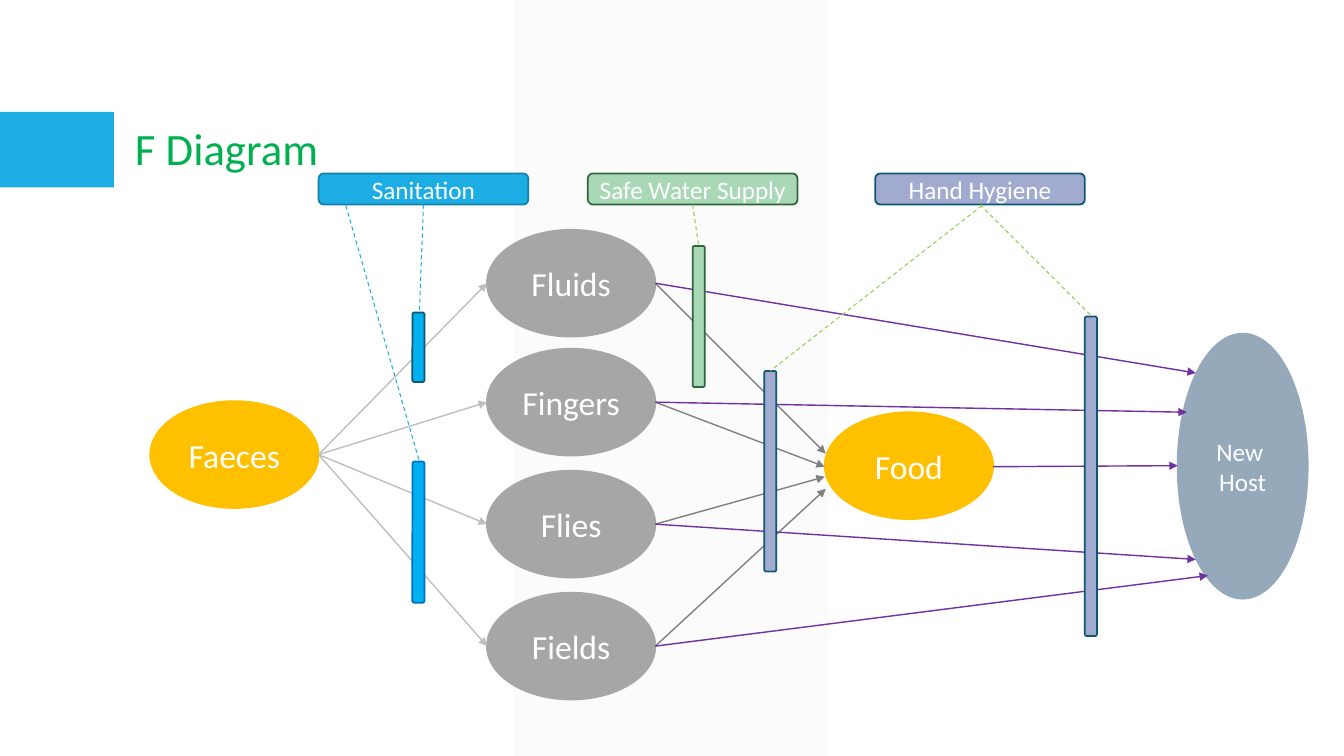
from lxml import etree
from pptx import Presentation
from pptx.dml.color import RGBColor
from pptx.enum.dml import MSO_LINE
from pptx.enum.shapes import MSO_CONNECTOR, MSO_SHAPE
from pptx.enum.text import MSO_ANCHOR, MSO_AUTO_SIZE, PP_ALIGN
from pptx.oxml.ns import qn
from pptx.util import Pt

EMU_PER_PX = 9144  # 100 px to the inch

WHITE, BLUE, YELLOW, GREY = "FFFFFF", "1CADE4", "FFC000", "A6A6A6"
MINT, LILAC, STEEL = "A9D8B7", "A1ABD0", "96A9BA"
DARK_GREEN, DARK_BLUE = "2F663E", "0E5772"
PALE_ARROW, GREY_ARROW, PURPLE, LIME = "BFBFBF", "808080", "7030A0", "92D050"


def px(n):
    return n * EMU_PER_PX


def rgb(color):
    return RGBColor.from_string(color)


class Board:
    """Holds the slide and its text style."""

    def __init__(self, slide, font="Calibri"):
        self.slide = slide
        self.font = font

    def set_text(self, tf, lines, size, color, align):
        for i, line in enumerate(lines):
            p = tf.paragraphs[0] if i == 0 else tf.add_paragraph()
            p.text = line
            p.alignment = align
            p.font.name = self.font
            p.font.size = Pt(size)
            p.font.color.rgb = rgb(color)

    def shape(self, kind, box, fill, line=None, lines=(), size=24):
        sp = self.slide.shapes.add_shape(kind, *map(px, box))
        sp.shadow.inherit = False
        sp.fill.solid()
        sp.fill.fore_color.rgb = rgb(fill)
        if line:
            sp.line.color.rgb = rgb(line)
            sp.line.width = Pt(1.25)
        else:
            sp.line.fill.background()
        sp.text_frame.vertical_anchor = MSO_ANCHOR.MIDDLE
        self.set_text(sp.text_frame, lines, size, WHITE, PP_ALIGN.CENTER)
        return sp

    def ellipse(self, box, fill, lines, size=24):
        return self.shape(MSO_SHAPE.OVAL, box, fill, fill, lines, size)

    def bar(self, box, fill, line, lines=()):
        return self.shape(MSO_SHAPE.ROUNDED_RECTANGLE, box, fill, line, lines, 18)

    def connector(self, start, end, color, width):
        cn = self.slide.shapes.add_connector(
            MSO_CONNECTOR.STRAIGHT, *map(px, start + end))
        cn.line.color.rgb = rgb(color)
        cn.line.width = Pt(width)
        etree.SubElement(cn._element.spPr, qn("a:effectLst"))
        return cn

    def arrow(self, start, end, color):
        cn = self.connector(start, end, color, 1)
        ln = cn._element.spPr.find(qn("a:ln"))
        etree.SubElement(ln, qn("a:tailEnd"), type="triangle")

    def dashed(self, start, end, color):
        self.connector(start, end, color, 0.75).line.dash_style = MSO_LINE.DASH

    def title(self, box, text):
        sp = self.slide.shapes.add_textbox(*map(px, box))
        tf = sp.text_frame
        tf.word_wrap = True
        tf.auto_size = MSO_AUTO_SIZE.SHAPE_TO_FIT_TEXT
        self.set_text(tf, [text], 32, "00B050", PP_ALIGN.LEFT)


def main():
    prs = Presentation()
    prs.slide_width, prs.slide_height = px(1333), px(750)
    s = Board(prs.slides.add_slide(prs.slide_layouts[6]))

    # Background band and title marker
    band = s.shape(MSO_SHAPE.PARALLELOGRAM, (510, 0, 312, 750), "F2F2F2")
    band.adjustments[0] = 0
    clr = band._element.spPr.find(qn("a:solidFill"))[0]
    etree.SubElement(clr, qn("a:alpha"), val="30000")
    s.shape(MSO_SHAPE.RECTANGLE, (0, 111, 113, 75), BLUE)

    # Source, carriers and food
    w, h = 167, 106
    s.ellipse((149, 398, w, h), YELLOW, ["Faeces"])
    carriers = [("Fluids", 228), ("Fingers", 346), ("Flies", 467), ("Fields", 588)]
    for name, top in carriers:
        s.ellipse((483, top, w, h), GREY, [name])
    s.ellipse((818, 409, w, h), YELLOW, ["Food"])

    # Routes through each carrier to food and to the new host
    middles = [top + h // 2 for _, top in carriers]
    food_ends = [(819, 450), (818, 463), (818, 473), (819, 485)]
    host_ends = [(1186, 370), (1177, 409), (1186, 555), (1198, 571)]
    for y in middles:
        s.arrow((316, 451), (483, y), PALE_ARROW)
    for y, end in zip(middles, food_ends):
        s.arrow((650, y), end, GREY_ARROW)
    s.ellipse((1168, 331, 129, 263), STEEL, ["New ", "Host"], 18)
    for y, end in zip(middles, host_ends):
        s.arrow((650, y), end, PURPLE)
    s.arrow((985, 463), (1168, 462), PURPLE)

    # Barriers across the routes
    for left, top, height, fill, line in [
        (409, 458, 140, "00B0F0", "0070C0"),
        (409, 310, 69, "00B0F0", DARK_BLUE),
        (687, 244, 140, MINT, DARK_GREEN),
        (758, 368, 199, LILAC, DARK_BLUE),
        (1076, 314, 317, LILAC, DARK_BLUE),
    ]:
        s.bar((left, top, 12, height), fill, line)

    # Barrier labels
    for left, name, fill, line in [
        (316, "Sanitation", BLUE, "1580A9"),
        (583, "Safe Water Supply", MINT, DARK_GREEN),
        (868, "Hand Hygiene", LILAC, DARK_BLUE),
    ]:
        s.bar((left, 172, 208, 31), fill, line, [name])

    # Links from labels to barriers
    for start, end, color in [
        ((420, 203), (416, 310), BLUE),
        ((343, 204), (416, 458), BLUE),
        ((687, 203), (693, 244), LIME),
        ((974, 204), (764, 368), LIME),
        ((972, 203), (1083, 314), LIME),
    ]:
        s.dashed(start, end, color)

    s.title((124, 115, 342, 64), "F Diagram")
    prs.save("out.pptx")


if __name__ == "__main__":
    main()
